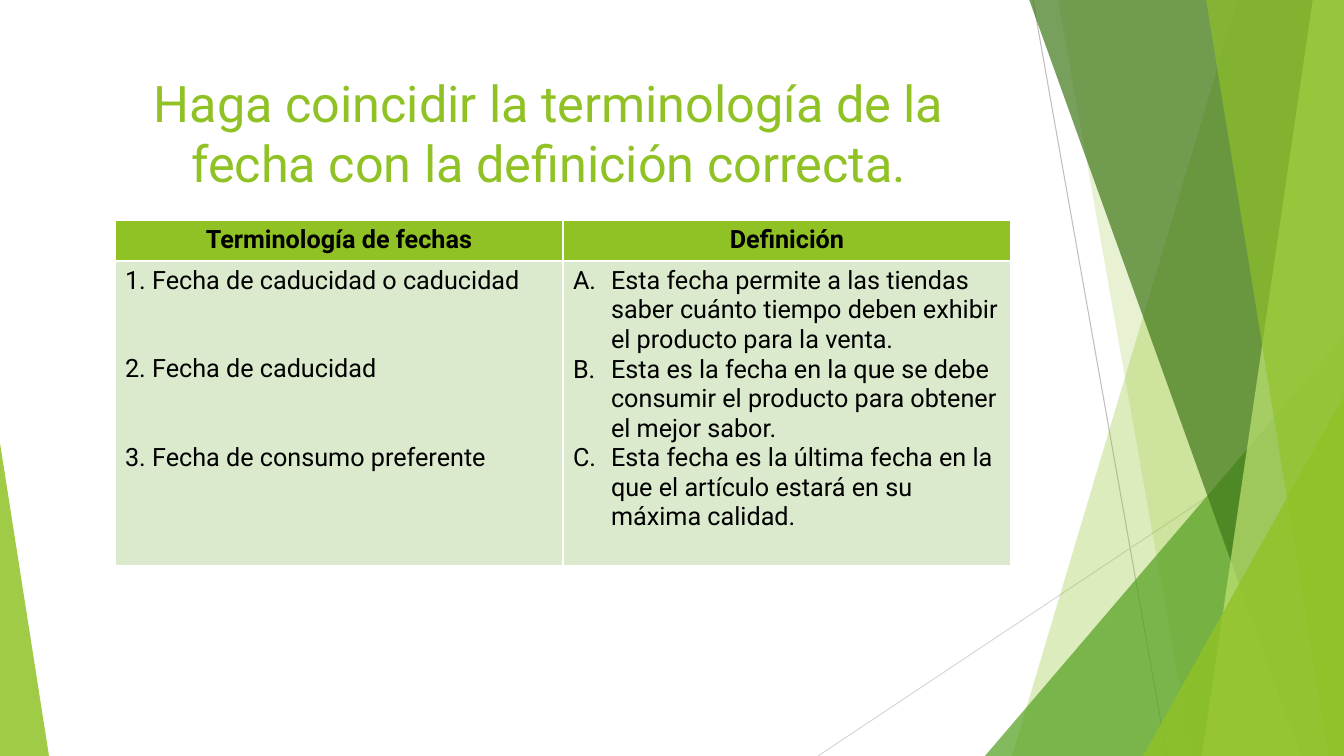
from lxml import etree
from pptx import Presentation
from pptx import util as u
from pptx.dml.color import RGBColor
from pptx.enum import shapes, text
from pptx.oxml import ns

SCALE = 914400 / 100.8
WIDTH, HEIGHT = 1344, 756
FONT = "Roboto"
LIME = RGBColor(0x90, 0xC2, 0x26)
GREEN = RGBColor(0x54, 0xA0, 0x21)
FOREST = RGBColor(0x3F, 0x78, 0x19)
PALE_LIME = RGBColor(0xC0, 0xE4, 0x74)
PALE_GREEN = RGBColor(0xDB, 0xE9, 0xCD)
GRAY = RGBColor(0xBF, 0xBF, 0xBF)
LIGHT_GRAY = RGBColor(0xD9, 0xD9, 0xD9)
BLACK = RGBColor(0, 0, 0)


def px(*lengths):
    return [u.Emu(round(length * SCALE)) for length in lengths]


def paint(facet, color, opacity):
    facet.shadow.inherit = False
    facet.line.fill.background()
    facet.fill.solid()
    facet.fill.fore_color.rgb = color
    color_node = facet.fill._xPr.find(".//" + ns.qn("a:srgbClr"))
    etree.SubElement(color_node, ns.qn("a:alpha"), val=str(opacity * 1000))


deck = Presentation()
deck.slide_width, deck.slide_height = px(WIDTH, HEIGHT)
page = deck.slides.add_slide(deck.slide_layouts[5])

# Thin crossing lines
for ends, color in (((1033, 0, 1167, HEIGHT), GRAY), ((WIDTH, 406, 818, HEIGHT), LIGHT_GRAY)):
    ray = page.shapes.add_connector(shapes.MSO_CONNECTOR.STRAIGHT, *px(*ends))
    ray.line.color.rgb = color
    ray.line.width = u.Pt(0.75)
    etree.SubElement(ray._element.spPr, ns.qn("a:effectLst"))

# Translucent facets, back to front: bands give the x of their slanted
# left edge at top and bottom, triangles give left, top, width, height, apex
facets = [
    ((1238, 1012), LIME, 30),
    ((1058, 1192), LIME, 20),
    ((985, 336, 359, 420, 1), GREEN, 72),
    ((1029, 1301), FOREST, 70),
    ((1313, 1202), PALE_LIME, 70),
    ((1206, 1329), LIME, 65),
    ((1143, 396, 201, 360, 1), LIME, 80),
    ((0, 443, 49, 313, 0), LIME, 85),
]
for outline, color, opacity in facets:
    if len(outline) == 2:
        top_x, bottom_x = outline
        builder = page.shapes.build_freeform(top_x, -1, scale=SCALE)
        builder.add_line_segments([(WIDTH, -1), (WIDTH, HEIGHT), (bottom_x, HEIGHT)])
        facet = builder.convert_to_shape()
    else:
        *frame, apex = outline
        facet = page.shapes.add_shape(shapes.MSO_SHAPE.ISOSCELES_TRIANGLE, *px(*frame))
        facet.adjustments[0] = apex
    paint(facet, color, opacity)

# Title
title = page.shapes.title
title.left, title.top, title.width, title.height = px(75, 67, 948, 145)
title.text_frame.text = "Haga coincidir la terminología de la fecha con la definición correcta."
title.text_frame.word_wrap = True
title.text_frame.auto_size = text.MSO_AUTO_SIZE.NONE
title.text_frame.vertical_anchor = text.MSO_ANCHOR.TOP
para = title.text_frame.paragraphs[0]
para.alignment = text.PP_ALIGN.CENTER
para.font.name, para.font.size, para.font.color.rgb = FONT, u.Pt(36), LIME

# Matching table
terms = [
    "1. Fecha de caducidad o caducidad",
    "2. Fecha de caducidad",
    "3. Fecha de consumo preferente",
]
definitions = [
    "Esta fecha permite a las tiendas saber cuánto tiempo deben exhibir el producto para la venta.",
    "Esta es la fecha en la que se debe consumir el producto para obtener el mejor sabor.",
    "Esta fecha es la última fecha en la que el artículo estará en su máxima calidad.",
]
rows = [[["Terminología de fechas"], ["Definición"]], [terms, definitions]]
table = page.shapes.add_table(2, 2, *px(115, 220, 896, 346)).table
table.rows[0].height, table.rows[1].height = px(41, 305)

for row_index, row in enumerate(rows):
    header = row_index == 0
    for column_index, lines in enumerate(row):
        cell = table.cell(row_index, column_index)
        cell.fill.solid()
        cell.fill.fore_color.rgb = LIME if header else PALE_GREEN
        cell.text_frame.text = "\n".join(lines)
        for line_index, para in enumerate(cell.text_frame.paragraphs):
            if header:
                para.alignment = text.PP_ALIGN.CENTER
            elif lines is definitions:
                properties = para._p.get_or_add_pPr()
                indent = px(38)[0]
                properties.set("marL", str(indent))
                properties.set("indent", str(-indent))
                etree.SubElement(properties, ns.qn("a:buFont"), typeface="+mj-lt")
                etree.SubElement(properties, ns.qn("a:buAutoNum"), type="alphaUcPeriod")
            elif line_index > 0:
                # Two text lines of space align each term with its definition
                para.space_before = u.Pt(42)
            para.font.name, para.font.size = FONT, u.Pt(18)
            para.font.bold = header
            para.font.color.rgb = BLACK

deck.save("out.pptx")
